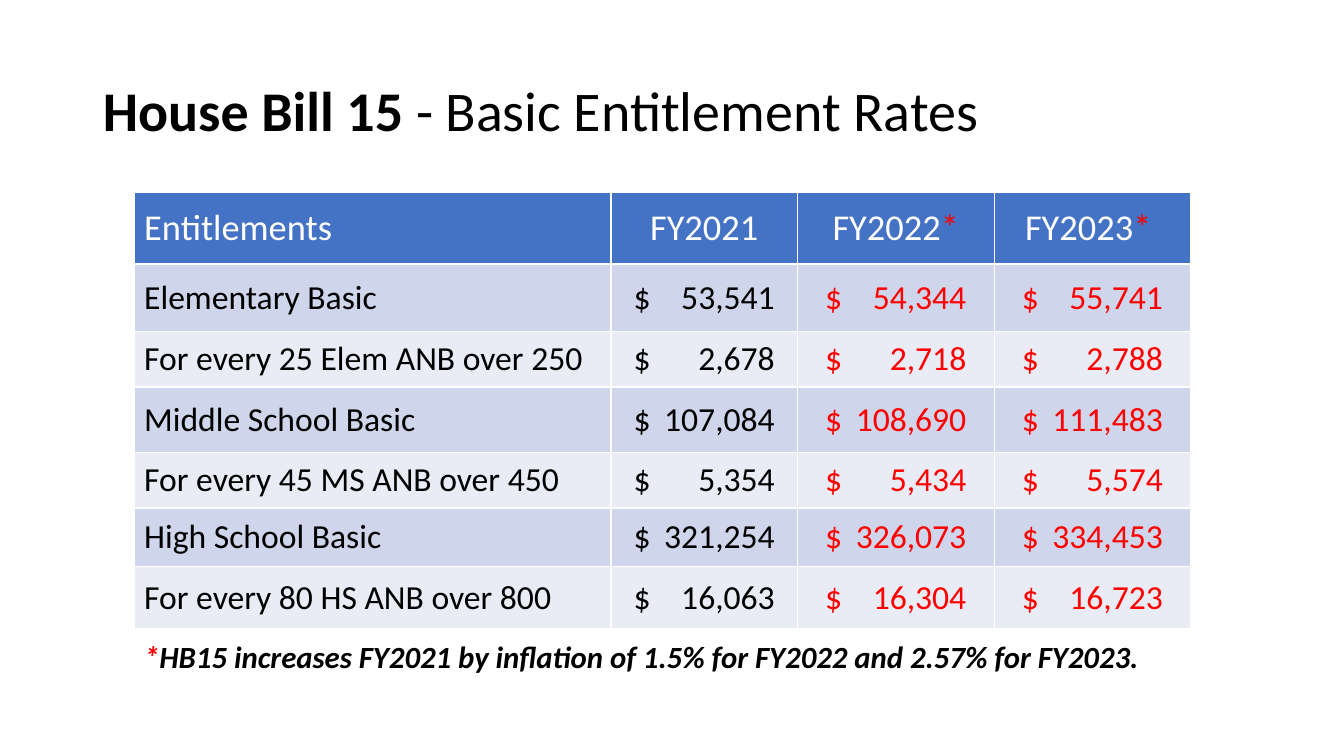
"""Build the House Bill 15 basic entitlement rates slide."""
from lxml.etree import SubElement
from pptx import Presentation
from pptx.dml.color import RGBColor
from pptx.enum.text import MSO_ANCHOR as Anchor, MSO_AUTO_SIZE as AutoSize, PP_ALIGN as Align
from pptx.oxml.ns import qn
from pptx.util import Inches, Pt

BLACK, WHITE, RED = "000000", "FFFFFF", "FF0000"
HEADER_FILL, BANDS = "4472C4", ("CFD5EA", "E9EBF5")

TITLE = [("House Bill 15 ", BLACK, True), ("- Basic Entitlement Rates", BLACK, False)]
HEADINGS = [
    [("Entitlements", WHITE)],
    [("FY2021", WHITE)],
    [("FY2022", WHITE), ("*", RED)],
    [("FY2023", WHITE), ("* ", RED)],
]
RATES = [
    ("Elementary Basic", 53541, 54344, 55741),
    ("For every 25 Elem ANB over 250", 2678, 2718, 2788),
    ("Middle School Basic", 107084, 108690, 111483),
    ("For every 45 MS ANB over 450", 5354, 5434, 5574),
    ("High School Basic", 321254, 326073, 334453),
    ("For every 80 HS ANB over 800", 16063, 16304, 16723),
]
FOOTNOTE = [
    ("*", RED, True),
    ("HB15 increases FY2021 by inflation of 1.5% for FY2022 and 2.57% for FY2023.", BLACK, True),
]

COLUMNS = (4.73, 1.85, 1.95, 1.95)
ROWS = (0.71, 0.67, 0.55, 0.65, 0.55, 0.58, 0.62)
TABLE_LEFT, TABLE_TOP = 1.33, 1.91
AMOUNT_WIDTH = 1.4


def color(value):
    return RGBColor.from_string(value)


def write(paragraph, parts, size, italic=False):
    for words, ink, *bold in parts:
        run = paragraph.add_run()
        run.text = words
        font = run.font
        font.name, font.size, font.italic = "Calibri", Pt(size), italic
        font.bold = bool(bold and bold[0])
        font.color.rgb = color(ink)


def place(shape, left, top, width, height):
    shape.left, shape.top = Inches(left), Inches(top)
    shape.width, shape.height = Inches(width), Inches(height)


def add_right_tab(paragraph, position):
    stops = SubElement(paragraph._p.get_or_add_pPr(), qn("a:tabLst"))
    SubElement(stops, qn("a:tab"), pos=str(Inches(position)), algn="r")


def fill_cell(cell, parts, size, fill):
    cell.fill.solid()
    cell.fill.fore_color.rgb = color(fill)
    cell.vertical_anchor = Anchor.MIDDLE
    paragraph = cell.text_frame.paragraphs[0]
    write(paragraph, parts, size)
    return paragraph


def add_rates(slide):
    frame = slide.shapes.add_table(
        len(ROWS), len(COLUMNS), Inches(TABLE_LEFT), Inches(TABLE_TOP),
        Inches(sum(COLUMNS)), Inches(sum(ROWS)))
    table = frame.table
    for column, width in zip(table.columns, COLUMNS):
        column.width = Inches(width)
    for row, height in zip(table.rows, ROWS):
        row.height = Inches(height)

    for c, heading in enumerate(HEADINGS):
        paragraph = fill_cell(table.cell(0, c), heading, 26, HEADER_FILL)
        paragraph.alignment = Align.CENTER if c else Align.LEFT

    for r, (entitlement, *amounts) in enumerate(RATES, 1):
        band = BANDS[(r - 1) % 2]
        fill_cell(table.cell(r, 0), [(entitlement, BLACK)], 24, band)
        for c, amount in enumerate(amounts, 1):
            cell = table.cell(r, c)
            ink = BLACK if c == 1 else RED
            paragraph = fill_cell(cell, [(f"$\t{amount:,}", ink)], 24, band)
            cell.margin_left = Inches((COLUMNS[c] - AMOUNT_WIDTH) / 2)
            add_right_tab(paragraph, AMOUNT_WIDTH)


def main():
    deck = Presentation()
    deck.slide_width, deck.slide_height = Inches(13.33), Inches(7.5)
    slide = deck.slides.add_slide(deck.slide_layouts[5])

    title = slide.shapes.title
    place(title, 0.92, 0.4, 11.5, 1.45)
    title.text_frame.auto_size = AutoSize.NONE
    title.text_frame.vertical_anchor = Anchor.MIDDLE
    heading = title.text_frame.paragraphs[0]
    heading.alignment, heading.line_spacing = Align.LEFT, 0.9
    write(heading, TITLE, 40)

    add_rates(slide)

    footnote = slide.shapes.add_textbox(0, 0, 0, 0)
    place(footnote, TABLE_LEFT, 6.28, sum(COLUMNS), 0.47)
    footnote.text_frame.word_wrap = True
    write(footnote.text_frame.paragraphs[0], FOOTNOTE, 22, italic=True)

    deck.save("out.pptx")


if __name__ == "__main__":
    main()
